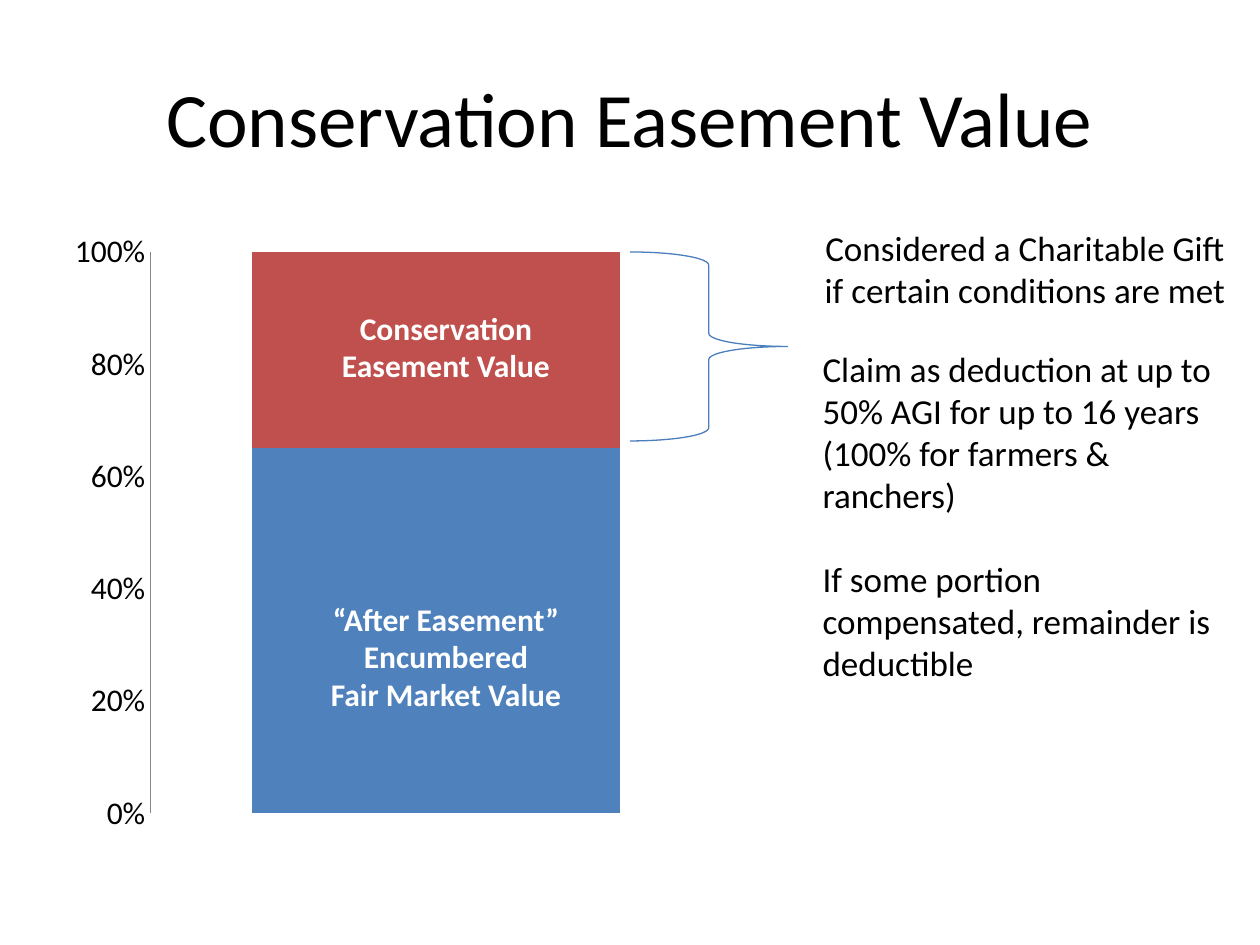
from lxml.etree import SubElement
from pptx import Presentation
from pptx.chart.data import CategoryChartData
from pptx.dml.color import RGBColor
from pptx.enum.chart import XL_CHART_TYPE, XL_TICK_MARK
from pptx.enum.shapes import MSO_SHAPE
from pptx.enum.text import MSO_ANCHOR, PP_ALIGN
from pptx.oxml.ns import qn
from pptx.util import Inches, Pt

BLACK = RGBColor(0x00, 0x00, 0x00)
WHITE = RGBColor(0xFF, 0xFF, 0xFF)
BLUE = RGBColor(0x4F, 0x81, 0xBD)
RED = RGBColor(0xC0, 0x50, 0x4D)
BRACE_BLUE = RGBColor(0x4B, 0x7E, 0xBC)
GREY = RGBColor(0x86, 0x86, 0x86)

COLUMNS, ROWS = 20, 15
WIDTH, HEIGHT = Inches(10), Inches(7.5)

TITLE = {"name": "Calibri", "size": Pt(44)}
BODY = {"name": "Calibri", "size": Pt(20)}
LABEL = {"name": "Calibri", "size": Pt(18), "bold": True}
AXIS = {"name": "Calibri", "size": Pt(18)}


def apply(obj, values):
    for name, value in values.items():
        setattr(obj, name, value)


def grid(col, row, cols, rows):
    return (round(WIDTH * col / COLUMNS), round(HEIGHT * row / ROWS),
            round(WIDTH * cols / COLUMNS), round(HEIGHT * rows / ROWS))


def style_font(font, values, color):
    apply(font, values)
    font.color.rgb = color


def add_text(s, cell, lines, font, color=BLACK, align=PP_ALIGN.CENTER,
             wrap=False, anchor=MSO_ANCHOR.TOP, gaps={}):
    tf = s.shapes.add_textbox(*grid(*cell)).text_frame
    apply(tf, {"word_wrap": wrap, "vertical_anchor": anchor})
    for i, line in enumerate(lines):
        p = tf.add_paragraph() if i else tf.paragraphs[0]
        p.alignment = align
        if i in gaps:
            p.space_before = gaps[i]
        r = p.add_run()
        r.text = line
        style_font(r.font, font, color)


def set_plot_area(chart, shares):
    plot_area = chart.plots[0]._element.getparent()
    layout = plot_area.find(qn("c:layout"))
    if layout is None:
        layout = SubElement(plot_area, qn("c:layout"))
        plot_area.insert(0, layout)
    manual = SubElement(layout, qn("c:manualLayout"))
    settings = {"layoutTarget": "inner", "xMode": "edge", "yMode": "edge", **shares}
    for tag, value in settings.items():
        SubElement(manual, qn(f"c:{tag}")).set("val", str(value))


def add_value_chart(s, cell):
    data = CategoryChartData()
    data.categories = ["1"]
    data.add_series("Series 1", [65])
    data.add_series("Series 2", [35])
    chart = s.shapes.add_chart(
        XL_CHART_TYPE.COLUMN_STACKED_100, *grid(*cell), data).chart
    apply(chart, {"has_legend": False, "has_title": False})
    style_font(chart.font, AXIS, BLACK)
    plot = chart.plots[0]
    apply(plot, {"gap_width": 55, "overlap": 100, "vary_by_categories": False})
    for series, color in zip(plot.series, (BLUE, RED)):
        series.format.fill.solid()
        series.format.fill.fore_color.rgb = color
    chart.category_axis.visible = False
    axis = chart.value_axis
    apply(axis, {"major_unit": 0.2, "minimum_scale": 0, "maximum_scale": 1,
                 "has_major_gridlines": False,
                 "major_tick_mark": XL_TICK_MARK.NONE,
                 "minor_tick_mark": XL_TICK_MARK.NONE})
    apply(axis.tick_labels, {"number_format": "0%", "number_format_is_linked": False})
    axis.format.line.color.rgb = GREY
    set_plot_area(chart, {"x": 0.13, "y": 0.05, "w": 0.85, "h": 0.9})


def add_brace(s, cell):
    sp = s.shapes.add_shape(MSO_SHAPE.RIGHT_BRACE, *grid(*cell))
    sp.shadow.inherit = False
    sp.fill.background()
    sp.line.color.rgb = BRACE_BLUE
    sp.line.width = Pt(0.75)


def main():
    prs = Presentation()
    apply(prs, {"slide_width": WIDTH, "slide_height": HEIGHT})
    s = prs.slides.add_slide(prs.slide_layouts[6])
    add_text(s, (1, 0.6, 18, 2.5), ["Conservation Easement Value"], TITLE,
             wrap=True, anchor=MSO_ANCHOR.MIDDLE)
    add_value_chart(s, (1, 3.5, 10.66, 9.9))
    add_brace(s, (10, 4, 2.5, 3))
    add_text(s, (12.76, 3.5, 7.02, 1.54),
             ["Considered a Charitable Gift", "if certain conditions are met"], BODY)
    add_text(s, (5.22, 4.8, 3.72, 1.42),
             ["Conservation", "Easement Value"], LABEL, WHITE)
    add_text(s, (5, 9.42, 4.16, 2.02),
             ["“After Easement”", "Encumbered", "Fair Market Value"], LABEL, WHITE)
    add_text(s, (12.86, 5.42, 6.84, 5.58),
             ["Claim as deduction at up to 50% AGI for up to 16 years",
              "(100% for farmers & ranchers)",
              "If some portion compensated, remainder is deductible"],
             BODY, align=PP_ALIGN.LEFT, wrap=True, gaps={2: Pt(24)})
    prs.save("out.pptx")


if __name__ == "__main__":
    main()
